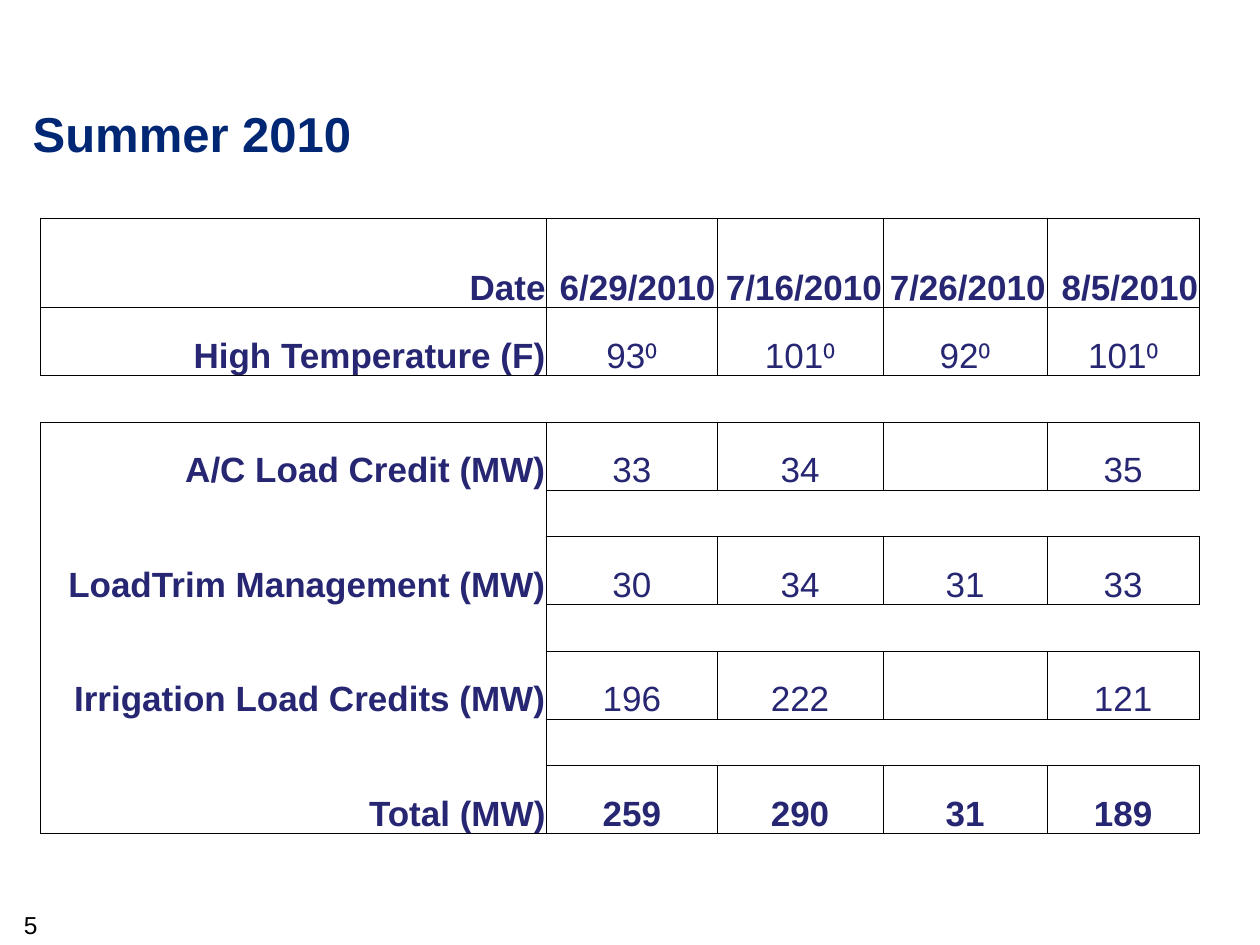
from pptx import Presentation
from pptx.util import Inches, Pt
from pptx.dml.color import RGBColor
from pptx.enum.text import MSO_ANCHOR, PP_ALIGN
from pptx.oxml.ns import qn
from lxml import etree

LEFT, MID, RIGHT = PP_ALIGN.LEFT, PP_ALIGN.CENTER, PP_ALIGN.RIGHT
MIDDLE, BOTTOM = MSO_ANCHOR.MIDDLE, MSO_ANCHOR.BOTTOM

COLORS = {"title": "002774", "table": "262673", "black": "000000"}

# Table content; an empty list is a spacer row
ROWS = [
    ["Date", "6/29/2010", "7/16/2010", "7/26/2010", "8/5/2010"],
    ["High Temperature (F)", "93⁰", "101⁰", "92⁰", "101⁰"],
    [],
    ["A/C Load Credit (MW)", "33", "34", "", "35"],
    [],
    ["LoadTrim Management (MW)", "30", "34", "31", "33"],
    [],
    ["Irrigation Load Credits (MW)", "196", "222", "", "121"],
    [],
    ["Total (MW)", "259", "290", "31", "189"],
]
WIDTHS = [4.02, 1.35, 1.32, 1.3, 1.21]
HEAD, TALL, GAP = 0.71, 0.54, 0.37
LABELS = 3  # first row of the joined label block
LAST = len(ROWS) - 1


def sides(row, col):
    """Return the edges of a cell that carry a line."""
    if col == 0 and row >= LABELS:
        return "LR" + "T" * (row == LABELS) + "B" * (row == LAST)
    if not ROWS[row]:
        return "TBL" if col == 1 and row > LABELS else "TB"
    return "LRTB"


class Deck:
    font = "Arial"

    def __init__(self):
        self.prs = Presentation()
        self.prs.slide_width, self.prs.slide_height = Inches(10), Inches(7.5)
        self.slide = self.prs.slides.add_slide(self.prs.slide_layouts[5])

    def label(self, frame, text, size, color, bold=False, align=LEFT):
        para = frame.paragraphs[0]
        para.text = text
        para.alignment = align
        font = para.font
        font.name, font.size, font.bold = self.font, Pt(size), bold
        font.color.rgb = RGBColor.from_string(COLORS[color])

    def title(self, text, x, y, w, h):
        shape = self.slide.shapes.title
        shape.left, shape.top = Inches(x), Inches(y)
        shape.width, shape.height = Inches(w), Inches(h)
        shape.text_frame.vertical_anchor = MIDDLE
        self.label(shape.text_frame, text, 28, "title", True)

    def text(self, text, x, y, w, h):
        box = self.slide.shapes.add_textbox(
            Inches(x), Inches(y), Inches(w), Inches(h))
        box.text_frame.word_wrap = True
        self.label(box.text_frame, text, 14, "black")

    def border(self, cell, edges):
        props = cell._tc.get_or_add_tcPr()
        for i, edge in enumerate("LRTB"):
            line = etree.Element(qn("a:ln" + edge), w=str(Pt(0.5)))
            if edge in edges:
                fill = etree.SubElement(line, qn("a:solidFill"))
                etree.SubElement(fill, qn("a:srgbClr"), val=COLORS["black"])
            else:
                etree.SubElement(line, qn("a:noFill"))
            props.insert(i, line)

    def table(self, x, y):
        heights = [HEAD] + [TALL if row else GAP for row in ROWS[1:]]
        table = self.slide.shapes.add_table(
            len(ROWS), len(WIDTHS), Inches(x), Inches(y),
            Inches(sum(WIDTHS)), Inches(sum(heights))).table
        table.first_row = table.horz_banding = False
        for col, width in zip(table.columns, WIDTHS):
            col.width = Inches(width)
        for r, (row, height) in enumerate(zip(ROWS, heights)):
            table.rows[r].height = Inches(height)
            for c in range(len(WIDTHS)):
                cell = table.cell(r, c)
                cell.margin_left = cell.margin_right = Inches(0.01)
                cell.margin_top, cell.margin_bottom = Inches(0.01), 0
                cell.vertical_anchor = BOTTOM
                cell.fill.background()
                self.border(cell, sides(r, c))
                if row and row[c]:
                    self.label(cell.text_frame, row[c], 20, "table",
                               c == 0 or r in (0, LAST),
                               RIGHT if c == 0 or r == 0 else MID)


def main():
    deck = Deck()
    # Heading
    deck.title("Summer 2010", 0.16, 0.51, 6.03, 1.09)
    # Page number
    deck.text("5", 0.09, 7.17, 1.18, 0.25)
    # Results by date
    deck.table(0.32, 1.73)
    deck.prs.save("out.pptx")


if __name__ == "__main__":
    main()
